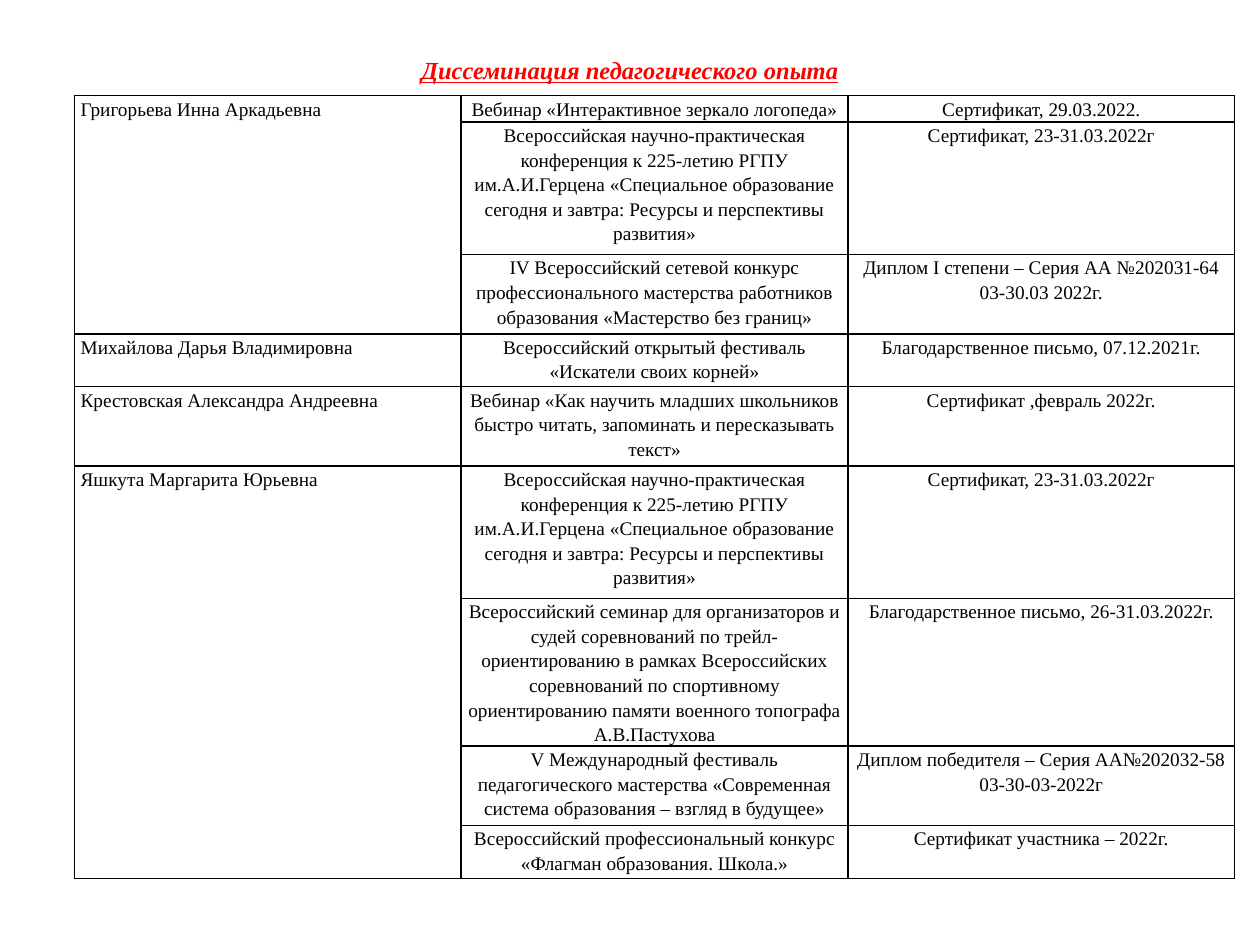
from lxml import etree
from pptx import Presentation
from pptx import util as u
from pptx.dml.color import RGBColor
from pptx.enum import text as t
from pptx.oxml.ns import qn

HEAD = "Диссеминация педагогического опыта"
CONF = ("Всероссийская научно-практическая конференция к 225-летию РГПУ им.А.И.Герцена "
        "«Специальное образование сегодня и завтра: Ресурсы и перспективы развития»")
STAFF = [
    ("Григорьева Инна Аркадьевна", [
        (1, "Вебинар «Интерактивное зеркало логопеда»", "Сертификат, 29.03.2022."),
        (5, CONF, "Сертификат, 23-31.03.2022г"),
        (3, "IV Всероссийский сетевой конкурс профессионального мастерства "
            "работников образования «Мастерство без границ»",
         "Диплом I степени – Серия АА №202031-64\n03-30.03 2022г."),
    ]),
    ("Михайлова Дарья Владимировна", [
        (2, "Всероссийский открытый фестиваль «Искатели своих корней»",
         "Благодарственное письмо, 07.12.2021г."),
    ]),
    ("Крестовская Александра Андреевна", [
        (3, "Вебинар «Как научить младших школьников быстро читать, "
            "запоминать и пересказывать текст»",
         "Сертификат ,февраль 2022г."),
    ]),
    ("Яшкута Маргарита Юрьевна", [
        (5, CONF, "Сертификат, 23-31.03.2022г"),
        (5, "Всероссийский семинар для организаторов и судей соревнований по "
            "трейл-ориентированию в рамках Всероссийских соревнований по спортивному "
            "ориентированию памяти военного топографа А.В.Пастухова",
         "Благодарственное письмо, 26-31.03.2022г."),
        (3, "V Международный фестиваль педагогического мастерства "
            "«Современная система образования – взгляд в будущее»",
         "Диплом победителя – Серия АА№202032-58\n03-30-03-2022г"),
        (2, "Всероссийский профессиональный конкурс «Флагман образования. Школа.»",
         "Сертификат участника – 2022г."),
    ]),
]

FACE = "Times New Roman"
THEME = {
    "head": dict(name=FACE, size=u.Pt(14), bold=True, italic=True, underline=True),
    "cell": dict(name=FACE, size=u.Pt(11), bold=False),
    "red": RGBColor(255, 0, 0),
    "ink": RGBColor(0, 0, 0),
    "rule": u.Pt(1),
}
WIDE, HIGH = u.Inches(10), u.Inches(7.5)
LEFT, TOP, SPAN = u.Inches(0.59), u.Inches(0.76), u.Inches(9.21)
LINE = u.Inches(0.21)
COLS = 3


def put(obj, **vals):
    for key, val in vals.items():
        setattr(obj, key, val)


def style(font, kind, hue):
    put(font, **THEME[kind])
    font.color.rgb = THEME[hue]


def edge(cell):
    props = cell._tc.get_or_add_tcPr()
    for side in ("lnL", "lnR", "lnT", "lnB"):
        line = etree.SubElement(props, qn("a:" + side), w=str(THEME["rule"]))
        fill = etree.SubElement(line, qn("a:solidFill"))
        etree.SubElement(fill, qn("a:srgbClr"), val=str(THEME["ink"]))
    cell.fill.background()


def write(cell, words, align):
    cell.text = words
    for para in cell.text_frame.paragraphs:
        put(para, alignment=align, line_spacing=1.15)
        for run in para.runs:
            style(run.font, "cell", "ink")


def title(slide):
    box = slide.shapes.title
    put(box, left=WIDE // 20, top=0, width=WIDE * 9 // 10, height=u.Inches(1.55))
    frame = box.text_frame
    put(frame, text=HEAD, word_wrap=True, vertical_anchor=t.MSO_ANCHOR.MIDDLE,
        margin_bottom=u.Inches(0.49))
    para = frame.paragraphs[0]
    para.alignment = t.PP_ALIGN.CENTER
    style(para.runs[0].font, "head", "red")


def table(slide):
    rows = [row for _, group in STAFF for row in group]
    high = LINE * sum(row[0] for row in rows)
    grid = slide.shapes.add_table(len(rows), COLS, LEFT, TOP, SPAN, high).table
    put(grid, first_row=False, horz_banding=False)
    for col in grid.columns:
        col.width = SPAN // COLS
    for cell in grid.iter_cells():
        put(cell, margin_left=u.Inches(0.05), margin_right=u.Inches(0.05),
            margin_top=0, margin_bottom=0)
        edge(cell)
        write(cell, "", t.PP_ALIGN.LEFT)
        style(cell.text_frame.paragraphs[0].font, "cell", "ink")
    for i, (lines, *words) in enumerate(rows):
        grid.rows[i].height = LINE * lines
        for j, part in enumerate(words, 1):
            write(grid.cell(i, j), part, t.PP_ALIGN.CENTER)
    start = 0
    for name, group in STAFF:
        cell = grid.cell(start, 0)
        write(cell, name, t.PP_ALIGN.LEFT)
        start += len(group)
        if len(group) > 1:
            cell.merge(grid.cell(start - 1, 0))


def main():
    deck = Presentation()
    put(deck, slide_width=WIDE, slide_height=HIGH)
    slide = deck.slides.add_slide(deck.slide_layouts[5])
    title(slide)
    table(slide)
    deck.save("out.pptx")


if __name__ == "__main__":
    main()
